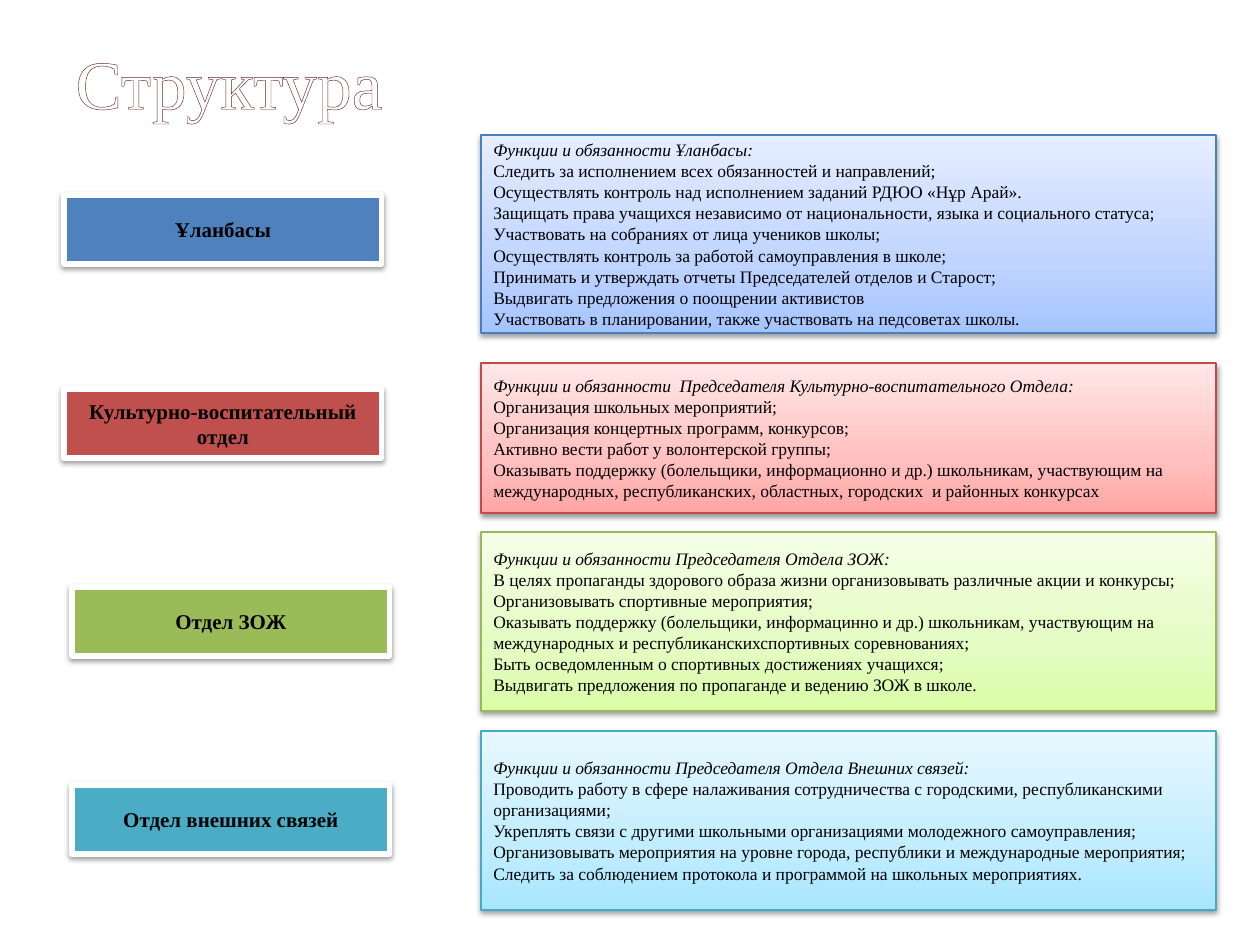
from copy import deepcopy

from lxml import etree
from pptx import Presentation
from pptx.dml.color import RGBColor
from pptx.enum.shapes import MSO_SHAPE
from pptx.enum.text import MSO_ANCHOR, PP_ALIGN
from pptx.oxml.ns import qn
from pptx.util import Emu, Pt

RECTANGLE = MSO_SHAPE.RECTANGLE
MIDDLE = MSO_ANCHOR.MIDDLE
LEFT, CENTER = PP_ALIGN.LEFT, PP_ALIGN.CENTER

BLACK = RGBColor(0x00, 0x00, 0x00)
WHITE = RGBColor(0xFF, 0xFF, 0xFF)
MAROON = RGBColor(0x63, 0x25, 0x23)
BLUE = RGBColor(0x4F, 0x81, 0xBD)
BLUE_EDGE = RGBColor(0x4B, 0x7E, 0xBC)
BLUE_TINTS = RGBColor(0xA4, 0xC4, 0xFF), RGBColor(0xBF, 0xD4, 0xFF), RGBColor(0xE6, 0xEE, 0xFF)
RED = RGBColor(0xC0, 0x50, 0x4D)
RED_EDGE = RGBColor(0xBF, 0x4C, 0x48)
RED_TINTS = RGBColor(0xFF, 0xA6, 0xA5), RGBColor(0xFF, 0xC0, 0xBF), RGBColor(0xFF, 0xE7, 0xE7)
GREEN = RGBColor(0x9B, 0xBB, 0x59)
GREEN_EDGE = RGBColor(0x98, 0xB9, 0x55)
GREEN_TINTS = RGBColor(0xDA, 0xFD, 0xA7), RGBColor(0xE4, 0xFC, 0xC2), RGBColor(0xF5, 0xFF, 0xE7)
AQUA = RGBColor(0x4B, 0xAC, 0xC6)
AQUA_EDGE = RGBColor(0x46, 0xAA, 0xC5)
AQUA_TINTS = RGBColor(0xA7, 0xE6, 0xFF), RGBColor(0xC1, 0xED, 0xFF), RGBColor(0xE7, 0xF8, 0xFF)

FONT = "Times New Roman"
TITLE = "Структура"

# Boxes are (left, top, width, height) in px
TITLE_BOX = (63, 38, 1134, 87)
LABEL_SIZE = (318, 69)
DUTIES_LEFT, DUTIES_WIDTH = 481, 735
TINT_STOPS = (0, 0.35, 1)

DEPARTMENTS = [
    {
        "name": "Ұланбасы",
        "label_at": (64, 195), "duties_top": 135, "duties_height": 198,
        "color": BLUE, "edge": BLUE_EDGE, "tints": BLUE_TINTS,
        "heading": "Функции и обязанности Ұланбасы:",
        "duties": [
            "Следить за исполнением всех обязанностей и направлений;",
            "Осуществлять контроль над исполнением заданий РДЮО «Нұр Арай».",
            "Защищать права учащихся независимо от национальности, языка и социального статуса;",
            "Участвовать на собраниях от лица учеников школы;",
            "Осуществлять контроль за работой самоуправления в школе;",
            "Принимать и утверждать отчеты Председателей отделов и Старост;",
            "Выдвигать предложения о поощрении активистов",
            "Участвовать в планировании, также участвовать на педсоветах школы.",
        ],
    },
    {
        "name": "Культурно-воспитательный отдел",
        "label_at": (64, 389), "duties_top": 363, "duties_height": 150,
        "color": RED, "edge": RED_EDGE, "tints": RED_TINTS,
        "heading": "Функции и обязанности  Председателя Культурно-воспитательного Отдела:",
        "duties": [
            "Организация школьных мероприятий;",
            "Организация концертных программ, конкурсов;",
            "Активно вести работ у волонтерской группы;",
            "Оказывать поддержку (болельщики, информационно и др.) школьникам, участвующим на  "
            "международных, республиканских, областных, городских  и районных конкурсах",
        ],
    },
    {
        "name": "Отдел ЗОЖ",
        "label_at": (72, 587), "duties_top": 532, "duties_height": 179,
        "color": GREEN, "edge": GREEN_EDGE, "tints": GREEN_TINTS,
        "heading": "Функции и обязанности Председателя Отдела ЗОЖ:",
        "duties": [
            "В целях пропаганды здорового образа жизни организовывать различные акции и конкурсы;",
            "Организовывать спортивные мероприятия;",
            "Оказывать поддержку (болельщики, информацинно и др.) школьникам, участвующим на "
            "международных и республиканскихспортивных соревнованиях;",
            "Быть осведомленным о спортивных достижениях учащихся;",
            "Выдвигать предложения по пропаганде и ведению ЗОЖ в школе.",
        ],
    },
    {
        "name": "Отдел внешних связей",
        "label_at": (72, 785), "duties_top": 731, "duties_height": 179,
        "color": AQUA, "edge": AQUA_EDGE, "tints": AQUA_TINTS,
        "heading": "Функции и обязанности Председателя Отдела Внешних связей:",
        "duties": [
            "Проводить работу в сфере налаживания сотрудничества с городскими, республиканскими "
            "организациями;",
            "Укреплять связи с другими школьными организациями молодежного самоуправления;",
            "Организовывать мероприятия на уровне города, республики и международные мероприятия;",
            "Следить за соблюдением протокола и программой на школьных мероприятиях.",
        ],
    },
]

LABEL_FORMAT = {"name": FONT, "size": Pt(12), "bold": True}
HEADING_FORMAT = {"name": FONT, "size": Pt(10), "italic": True}
DUTY_FORMAT = {"name": FONT, "size": Pt(10), "italic": False}
TITLE_FORMAT = {"name": FONT, "size": Pt(39.6)}


def px(length):
    return Emu(round(length * 914400 / 126))


def write(paragraph, text, color, font_format):
    run = paragraph.add_run()
    run.text = text
    run.font.color.rgb = color
    for attribute, value in font_format.items():
        setattr(run.font, attribute, value)
    return run


def add_shadow(shape):
    shape.shadow.inherit = False
    effects = shape._element.spPr.find(qn("a:effectLst"))
    outer = etree.SubElement(effects, qn("a:outerShdw"), blurRad=str(Pt(3.1)),
                             dist=str(Pt(1.6)), dir="5400000", rotWithShape="0")
    black = etree.SubElement(outer, qn("a:srgbClr"), val=str(BLACK))
    etree.SubElement(black, qn("a:alpha"), val="38000")


def fill_upward(shape, tints):
    """Blend three tints from the bottom edge to the top."""
    shape.fill.gradient()
    shape.fill.gradient_angle = 90
    stop_list = shape._element.spPr.find(qn("a:gradFill")).find(qn("a:gsLst"))
    stop_list.append(deepcopy(stop_list[-1]))
    for stop, position, tint in zip(shape.fill.gradient_stops, TINT_STOPS, tints):
        stop.position = position
        stop.color.rgb = tint


def add_box(slide, box, edge, edge_width, lines, alignment):
    shape = slide.shapes.add_shape(RECTANGLE, *map(px, box))
    shape.line.color.rgb = edge
    shape.line.width = Pt(edge_width)
    add_shadow(shape)
    frame = shape.text_frame
    frame.word_wrap = True
    frame.vertical_anchor = MIDDLE
    for index, (text, font_format) in enumerate(lines):
        paragraph = frame.add_paragraph() if index else frame.paragraphs[0]
        paragraph.alignment = alignment
        write(paragraph, text, BLACK, font_format)
    return shape


def add_title(slide):
    title = slide.shapes.title
    title.left, title.top, title.width, title.height = map(px, TITLE_BOX)
    title.text_frame.vertical_anchor = MIDDLE
    paragraph = title.text_frame.paragraphs[0]
    paragraph.alignment = LEFT
    run = write(paragraph, TITLE, WHITE, TITLE_FORMAT)
    outline = etree.Element(qn("a:ln"), w=str(Pt(1.45)))
    outline_fill = etree.SubElement(outline, qn("a:solidFill"))
    etree.SubElement(outline_fill, qn("a:srgbClr"), val=str(MAROON))
    run.font._element.insert(0, outline)


def main():
    presentation = Presentation()
    presentation.slide_width, presentation.slide_height = px(1260), px(945)
    slide = presentation.slides.add_slide(presentation.slide_layouts[5])
    add_title(slide)
    for department in DEPARTMENTS:
        label = add_box(slide, department["label_at"] + LABEL_SIZE, WHITE, 3,
                        [(department["name"], LABEL_FORMAT)], CENTER)
        label.fill.solid()
        label.fill.fore_color.rgb = department["color"]
        duties_box = (DUTIES_LEFT, department["duties_top"],
                      DUTIES_WIDTH, department["duties_height"])
        lines = [(department["heading"], HEADING_FORMAT)]
        lines += [(duty, DUTY_FORMAT) for duty in department["duties"]]
        duties = add_box(slide, duties_box, department["edge"], 0.75, lines, LEFT)
        fill_upward(duties, department["tints"])
    presentation.save("out.pptx")


if __name__ == "__main__":
    main()
